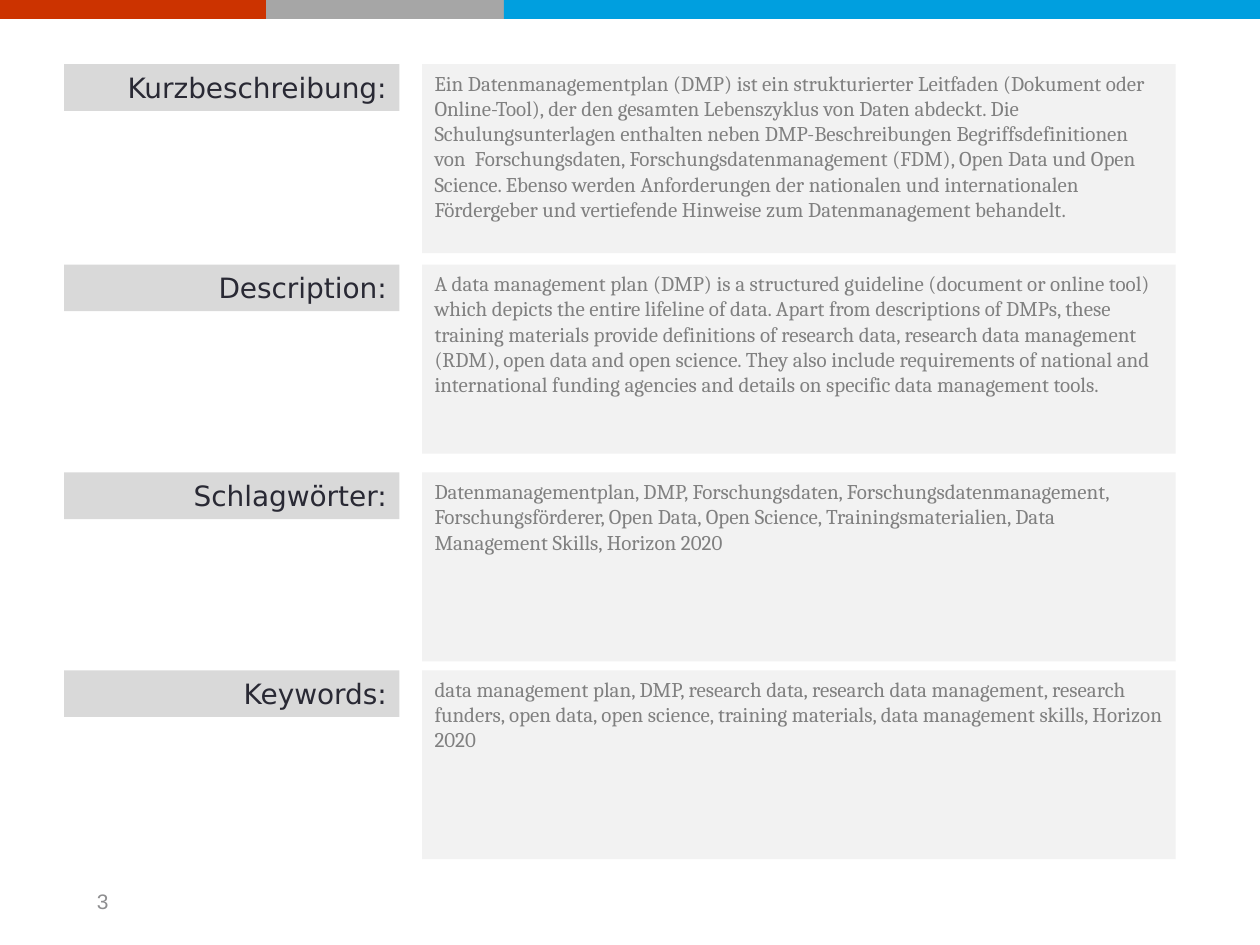
from pptx import Presentation
from pptx.dml.color import RGBColor
from pptx.enum.shapes import MSO_SHAPE
from pptx.enum.text import MSO_ANCHOR, MSO_AUTO_SIZE, PP_ALIGN
from pptx.util import Inches, Pt

RECT = MSO_SHAPE.RECTANGLE
TOP, MIDDLE = MSO_ANCHOR.TOP, MSO_ANCHOR.MIDDLE
LEFT, RIGHT = PP_ALIGN.LEFT, PP_ALIGN.RIGHT
FIXED, GROW = MSO_AUTO_SIZE.NONE, MSO_AUTO_SIZE.SHAPE_TO_FIT_TEXT

BAR_H = 0.15
BARS = [(0, 10, "A6A6A6"), (0, 2.11, "CC3300"), (4, 6, "009FDF")]
ROWS = [
    (0.51, "Kurzbeschreibung:",
     "Ein Datenmanagementplan (DMP) ist ein strukturierter Leitfaden (Dokument oder "
     "Online-Tool), der den gesamten Lebenszyklus von Daten abdeckt. Die "
     "Schulungsunterlagen enthalten neben DMP-Beschreibungen Begriffsdefinitionen "
     "von  Forschungsdaten, Forschungsdatenmanagement (FDM), Open Data und Open "
     "Science. Ebenso werden Anforderungen der nationalen und internationalen "
     "Fördergeber und vertiefende Hinweise zum Datenmanagement behandelt."),
    (2.1, "Description:",
     "A data management plan (DMP) is a structured guideline (document or online tool) "
     "which depicts the entire lifeline of data. Apart from descriptions of DMPs, these "
     "training materials provide definitions of research data, research data management "
     "(RDM), open data and open science. They also include requirements of national and "
     "international funding agencies and details on specific data management tools."),
    (3.75, "Schlagwörter:",
     "Datenmanagementplan, DMP, Forschungsdaten, Forschungsdatenmanagement, "
     "Forschungsförderer, Open Data, Open Science, Trainingsmaterialien, Data "
     "Management Skills, Horizon 2020"),
    (5.32, "Keywords:",
     "data management plan, DMP, research data, research data management, research "
     "funders, open data, open science, training materials, data management skills, "
     "Horizon 2020"),
]


def rgb(value):
    return RGBColor.from_string(value)


class Deck:
    label_font, body_font, number_font = "DejaVu Sans", "Cambria", "Arial"
    label_color, body_color, number_color = "292934", "808080", "8E8E90"
    label_fill, body_fill = "D9D9D9", "F2F2F2"

    def __init__(self, width, height):
        self.prs = Presentation()
        self.prs.slide_width, self.prs.slide_height = Inches(width), Inches(height)
        self.s = self.prs.slides.add_slide(self.prs.slide_layouts[6])

    def rect(self, x, y, w, h, fill):
        sp = self.s.shapes.add_shape(RECT, Inches(x), Inches(y), Inches(w), Inches(h))
        sp.shadow.inherit = False
        sp.fill.solid()
        sp.fill.fore_color.rgb = rgb(fill)
        sp.line.fill.background()
        return sp

    def add_text(self, sp, text, font, size, color, align=LEFT, anchor=TOP, fit=FIXED):
        tf = sp.text_frame
        tf.word_wrap = True
        tf.auto_size = fit
        tf.vertical_anchor = anchor
        p = tf.paragraphs[0]
        p.alignment = align
        r = p.add_run()
        r.text = text
        r.font.name, r.font.size = font, Pt(size)
        r.font.color.rgb = rgb(color)

    def label(self, y, text):
        sp = self.rect(0.51, y, 2.66, 0.37, self.label_fill)
        self.add_text(sp, text, self.label_font, 16, self.label_color, RIGHT, fit=GROW)

    def body(self, y, text):
        sp = self.rect(3.35, y, 5.98, 1.5, self.body_fill)
        self.add_text(sp, text, self.body_font, 12, self.body_color)

    def number(self, text):
        sp = self.s.shapes.add_textbox(Inches(0.67), Inches(6.95), Inches(2.33), Inches(0.4))
        self.add_text(sp, text, self.number_font, 12, self.number_color, anchor=MIDDLE)


def main():
    deck = Deck(10, 7.5)
    for x, w, fill in BARS:
        deck.rect(x, 0, w, BAR_H, fill)
    for y, title, text in ROWS:
        deck.label(y, title)
        deck.body(y, text)
    deck.number("3")
    deck.prs.save("out.pptx")


if __name__ == "__main__":
    main()
